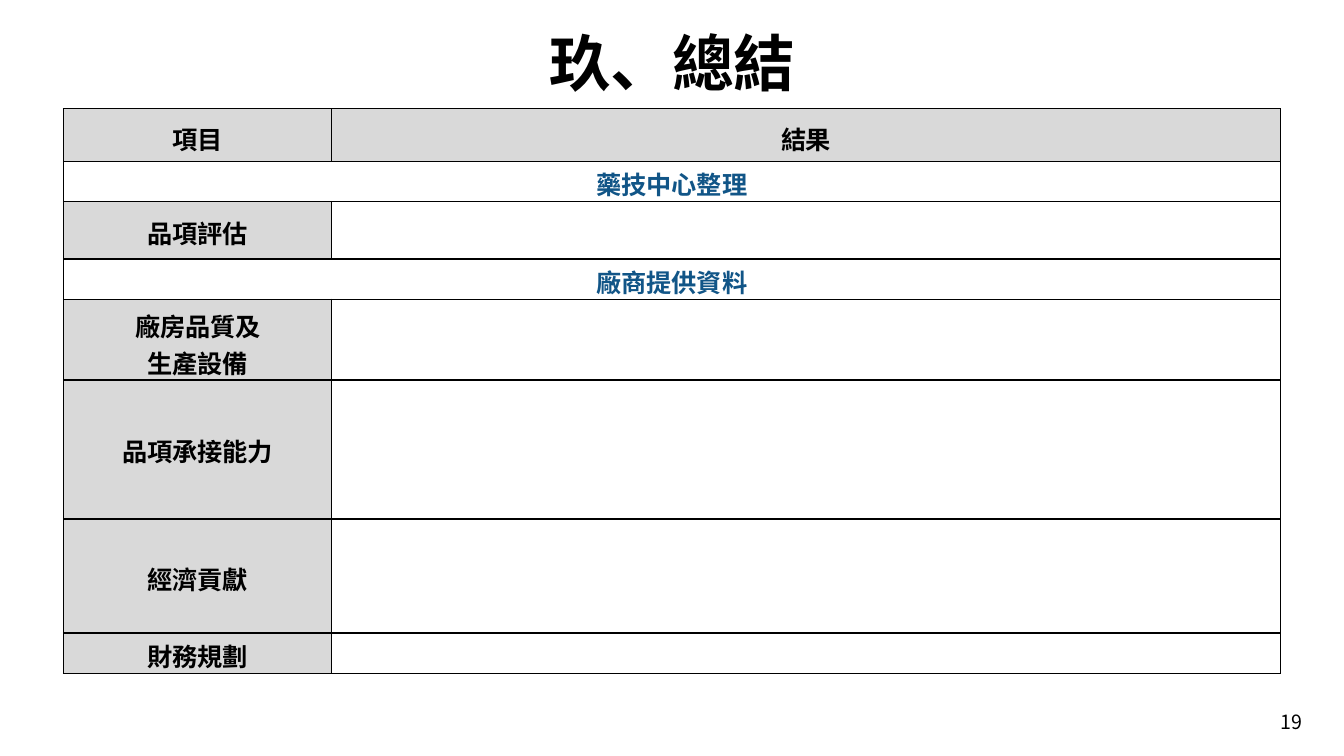
"""Build the closing summary slide: a title, a results table and a page number."""
import pptx
import pptx.dml.color
import pptx.enum.text
import pptx.oxml
import pptx.oxml.ns
import pptx.util

inch = pptx.util.Inches
FONT = "Noto Sans CJK SC"
BLACK, BLUE, GREY, WHITE = "000000", "115587", "D9D9D9", "FFFFFF"
CENTER = pptx.enum.text.PP_ALIGN.CENTER
LEFT = pptx.enum.text.PP_ALIGN.LEFT
NAMESPACE = pptx.oxml.ns.nsdecls("a")


def rgb(code):
    return pptx.dml.color.RGBColor.from_string(code)


def write(frame, text, size, color, bold, spacing, align):
    para = frame.paragraphs[0]
    para.alignment = align
    span = para.add_run()
    span.text = text
    for name, value in {"name": FONT, "size": pptx.util.Pt(size), "bold": bold}.items():
        setattr(span.font, name, value)
    span.font.color.rgb = rgb(color)
    properties = span._r.get_or_add_rPr()
    properties.set("spc", str(spacing))
    properties.append(pptx.oxml.parse_xml(f'<a:ea {NAMESPACE} typeface="{FONT}"/>'))
    return para


deck = pptx.Presentation()
deck.slide_width, deck.slide_height = inch(13.33), inch(7.5)
page = deck.slides.add_slide(deck.slide_layouts[6])

labels = [
    ((2.98, 0.32, 7.38, 0.76), "玖、總結", 44, True, -10, CENTER, 0.01, 0.9),
    ((12.7, 7.01, 0.3, 0.29), "19", 14, False, -20, LEFT, 0.03, 1.0),
]
for place, text, size, bold, spacing, align, top, leading in labels:
    box = page.shapes.add_textbox(*map(inch, place))
    margins = {"margin_left": 0, "margin_right": 0, "margin_top": inch(top), "margin_bottom": 0}
    for name, value in {"word_wrap": True, **margins}.items():
        setattr(box.text_frame, name, value)
    para = write(box.text_frame, text, size, BLACK, bold, spacing, align)
    para.line_spacing = leading

columns = [2.66, 9.41]
rows = [
    (0.52, 0.11, ["項目", "結果"]),
    (0.40, 0.04, ["藥技中心整理"]),
    (0.57, 0.13, ["品項評估", ""]),
    (0.40, 0.04, ["廠商提供資料"]),
    (0.80, 0.08, ["廠房品質及生產設備", ""]),
    (1.38, 0.52, ["品項承接能力", ""]),
    (1.13, 0.41, ["經濟貢獻", ""]),
    (0.40, 0.04, ["財務規劃", ""]),
]
heights = [height for height, top, texts in rows]
frame = page.shapes.add_table(
    len(rows), len(columns), inch(0.63), inch(1.08), inch(sum(columns)), inch(sum(heights))
)
summary = frame.table
summary.first_row = summary.horz_banding = False
for column, width in zip(summary.columns, columns):
    column.width = inch(width)

for row, (height, top, texts) in enumerate(rows):
    summary.rows[row].height = inch(height)
    section = len(texts) == 1
    if section:
        summary.cell(row, 0).merge(summary.cell(row, 1))
    for column in range(len(columns)):
        cell = summary.cell(row, column)
        text = texts[column] if column < len(texts) else ""
        margins = {"margin_left": 0, "margin_right": 0, "margin_top": inch(top if text else 0), "margin_bottom": 0}
        for name, value in margins.items():
            setattr(cell, name, value)
        for side in ("lnL", "lnR", "lnT", "lnB"):
            cell._tc.get_or_add_tcPr().append(pptx.oxml.parse_xml(
                f'<a:{side} {NAMESPACE} w="12700"><a:solidFill><a:srgbClr val="{BLACK}"/></a:solidFill></a:{side}>'
            ))
        cell.fill.solid()
        cell.fill.fore_color.rgb = rgb(GREY if text and not section else WHITE)
        if text:
            spacing = -20 if row == 0 else -10
            write(cell.text_frame, text, 18, BLUE if section else BLACK, True, spacing, CENTER)

quality = summary.cell(4, 0)
quality.margin_right = inch(0.6)
para = quality.text_frame.paragraphs[0]
para.alignment = LEFT
for name, value in {"marL": inch(0.83), "indent": inch(-0.12)}.items():
    para._p.get_or_add_pPr().set(name, str(value))

deck.save("out.pptx")
